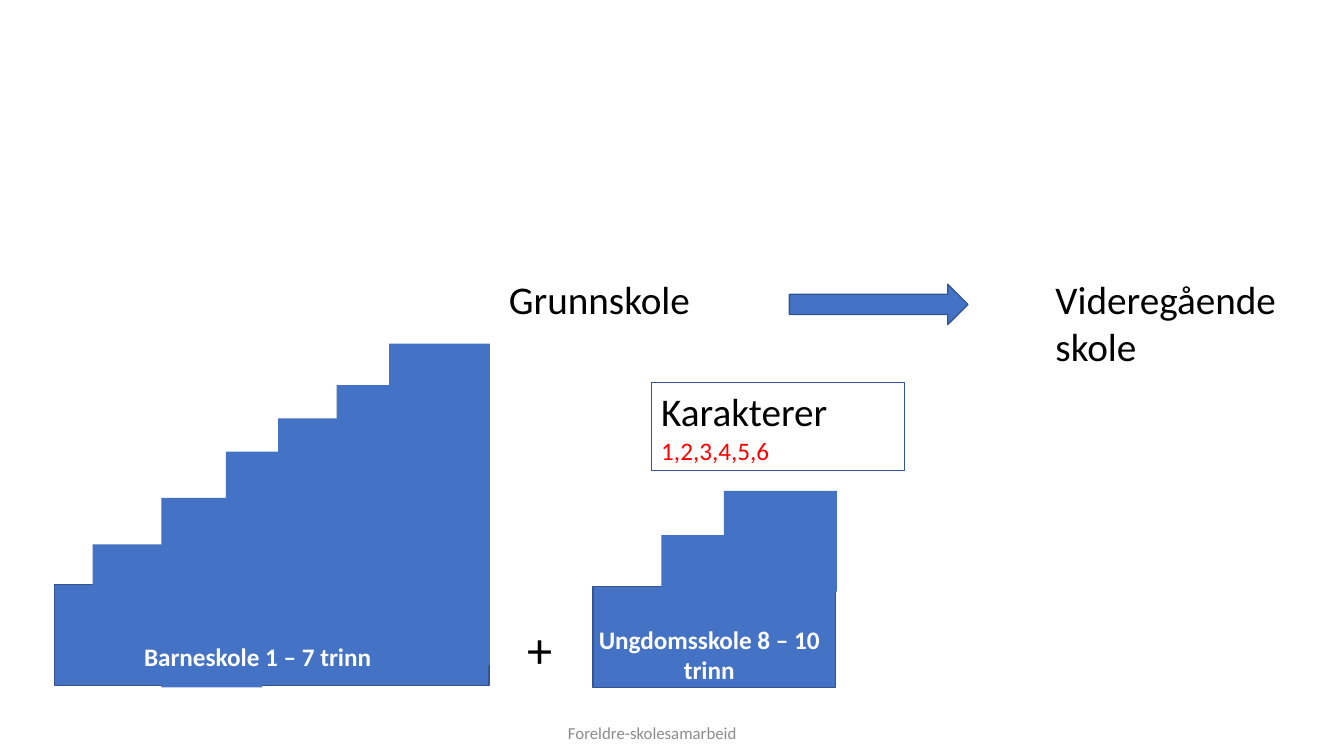
from pptx import Presentation
from pptx.dml.color import RGBColor
from pptx.enum.shapes import MSO_SHAPE as Preset
from pptx.enum.text import MSO_ANCHOR as Anchor, PP_ALIGN as Align
from pptx.util import Inches, Pt

BLUE = RGBColor(0x44, 0x72, 0xC4)
BLUE_EDGE = RGBColor(0x32, 0x54, 0x91)
BOX_EDGE = RGBColor(0x2F, 0x55, 0x97)
BLACK = RGBColor(0, 0, 0)
WHITE = RGBColor(0xFF, 0xFF, 0xFF)
RED = RGBColor(0xFF, 0, 0)
GRAY = RGBColor(0x8C, 0x8C, 0x8C)

PRIMARY_STEPS = [
    (2.76, 4.15, 1, 2.63),
    (2.24, 4.48, 1, 2.31),
    (1.6, 4.94, 1, 1.88),
    (3.34, 3.82, 1, 2.96),
    (3.86, 3.41, 1, 3.19),
    (0.92, 5.4, 3.6, 0.77),
]
SECONDARY_STEPS = [(7.18, 4.87, 1.12, 1), (6.56, 5.31, 1, 1)]


class SlideBuilder:
    """Draws styled elements on the current slide."""

    font_name = "Calibri"

    def __init__(self, slide):
        self.slide = slide

    def add_block(self, box, preset=Preset.RECTANGLE, fill=BLUE, edge=None, edge_width=1):
        shape = self.slide.shapes.add_shape(preset, *map(Inches, box))
        shape.shadow.inherit = False
        if fill is None:
            shape.fill.background()
        else:
            shape.fill.solid()
            shape.fill.fore_color.rgb = fill
        if edge is None:
            shape.line.fill.background()
        else:
            shape.line.color.rgb = edge
            shape.line.width = Pt(edge_width)
        return shape

    def add_staircase(self, base, steps):
        self.add_block(base, edge=BLUE_EDGE)
        for step in steps:
            self.add_block(step)

    def set_text(self, shape, lines, align=Align.LEFT, bold=False):
        frame = shape.text_frame
        frame.text = "\n".join(text for text, size, color in lines)
        for paragraph, (text, size, color) in zip(frame.paragraphs, lines):
            paragraph.alignment = align
            for run in paragraph.runs:
                run.font.name = self.font_name
                run.font.size = Pt(size)
                run.font.bold = bold
                run.font.color.rgb = color

    def add_label(self, box, text, size=28, color=BLACK, align=Align.LEFT,
                  bold=False, wrap=True, anchor=Anchor.TOP):
        label = self.slide.shapes.add_textbox(*map(Inches, box))
        label.text_frame.word_wrap = wrap
        label.text_frame.vertical_anchor = anchor
        self.set_text(label, [(text, size, color)], align, bold)


def main():
    presentation = Presentation()
    presentation.slide_width = Inches(13.33)
    presentation.slide_height = Inches(7.5)
    builder = SlideBuilder(presentation.slides.add_slide(presentation.slide_layouts[6]))

    builder.add_label((4.95, 2.68, 3.76, 0.57), "Grunnskole")
    builder.add_staircase((0.54, 5.8, 4.31, 1), PRIMARY_STEPS)
    builder.add_staircase((5.88, 5.82, 2.41, 1), SECONDARY_STEPS)
    builder.add_label((1.33, 6.31, 2.52, 0.4), "Barneskole 1 – 7 trinn", 18, WHITE,
                      bold=True, wrap=False)
    builder.add_label((5.78, 6.14, 2.51, 0.71), "Ungdomsskole 8 – 10 trinn", 18, WHITE,
                      Align.CENTER, bold=True)

    grades = builder.add_block((6.46, 3.79, 2.51, 0.88), fill=None,
                               edge=BOX_EDGE, edge_width=0.75)
    builder.set_text(grades, [("Karakterer", 28, BLACK), ("1,2,3,4,5,6", 18, RED)])

    builder.add_label((5.13, 6.08, 0.46, 0.71), "+", 36, wrap=False)
    builder.add_block((7.83, 2.82, 1.77, 0.4), Preset.RIGHT_ARROW, edge=BLUE_EDGE)
    builder.add_label((10.37, 2.68, 2.59, 1.04), "Videregående skole")
    builder.add_label((4.22, 7.07, 4.5, 0.4), "Foreldre-skolesamarbeid", 12, GRAY,
                      Align.CENTER, anchor=Anchor.MIDDLE)

    presentation.save("out.pptx")


if __name__ == "__main__":
    main()
